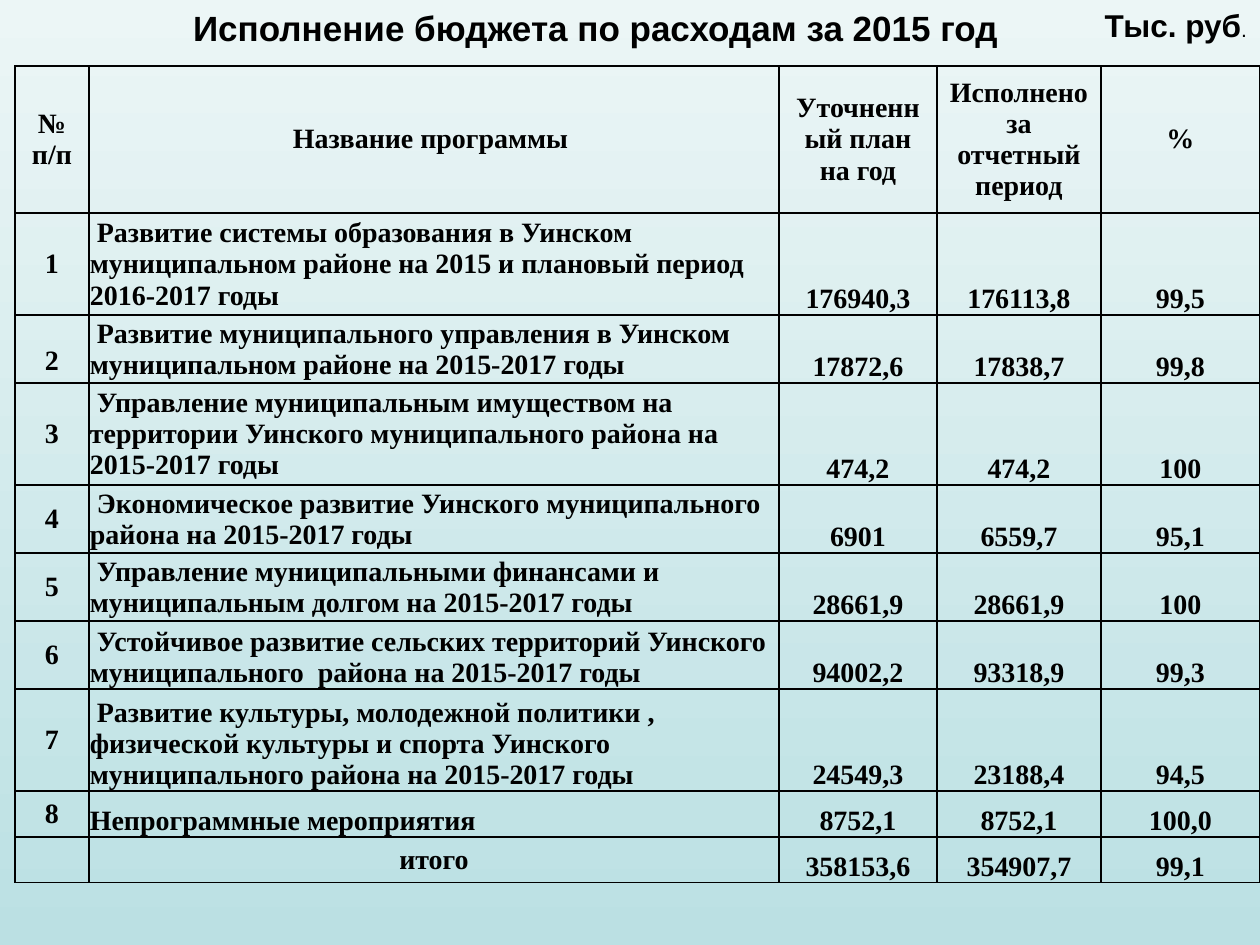
import dataclasses

import lxml.etree
import pptx
import pptx.dml.color
import pptx.enum.text
import pptx.oxml.ns
import pptx.util

# Content: number, programme, plan, actual, percent
TITLE = "Исполнение бюджета по расходам за 2015 год"
UNIT = "Тыс. руб"
HEADER = ("№ п/п", "Название программы ", "Уточненный план на год",
          "Исполнено за отчетный период", "%")
PROGRAMMES = [
    ("1", " Развитие системы образования в Уинском муниципальном районе на 2015 "
          "и плановый период 2016-2017 годы", "176940,3", "176113,8", "99,5"),
    ("2", " Развитие муниципального управления в Уинском муниципальном районе "
          "на 2015-2017 годы", "17872,6", "17838,7", "99,8"),
    ("3", " Управление муниципальным имуществом на территории Уинского "
          "муниципального района на 2015-2017 годы", "474,2", "474,2", "100"),
    ("4", " Экономическое развитие Уинского муниципального района "
          "на 2015-2017 годы", "6901", "6559,7", "95,1"),
    ("5", " Управление муниципальными финансами и муниципальным долгом "
          "на 2015-2017 годы", "28661,9", "28661,9", "100"),
    ("6", " Устойчивое развитие сельских территорий Уинского муниципального  "
          "района на 2015-2017 годы", "94002,2", "93318,9", "99,3"),
    ("7", " Развитие культуры, молодежной политики , физической культуры и спорта "
          "Уинского муниципального района на 2015-2017 годы",
     "24549,3", "23188,4", "94,5"),
    ("8", "Непрограммные мероприятия", "8752,1", "8752,1", "100,0"),
]
TOTAL = ("", "итого", "358153,6", "354907,7", "99,1")
ROWS = [HEADER, *PROGRAMMES, TOTAL]

# Layout in px, 126 px to the inch
COLUMN_WIDTHS = (74, 690, 158, 164, 159)
HEADER_HEIGHT, SHORT_HEIGHT = 147, 46
HEIGHT_BY_LINES = {2: 68, 3: 102}
NAME_LINES = (3, 2, 3, 2, 2, 2, 3)
ROW_HEIGHTS = [HEADER_HEIGHT, *(HEIGHT_BY_LINES[n] for n in NAME_LINES),
               SHORT_HEIGHT, SHORT_HEIGHT]
TABLE_LEFT, TABLE_TOP = 15, 66
NAME_COLUMN = 1
LOW_NUMBERS = {2}      # rows whose number sits at the bottom
LOW_NAMES = {6, 7, 8}  # rows whose name sits at the bottom


@dataclasses.dataclass(frozen=True)
class Theme:
    ink: str = "000000"
    top: str = "ECF6F6"
    bottom: str = "BBE0E3"
    heading_font: str = "Arial"
    table_font: str = "Times New Roman"
    title_size: int = 20
    unit_size: int = 18
    dot_size: int = 12
    table_size: int = 16
    border: int = 1


THEME = Theme()
ALIGN = pptx.enum.text.PP_ALIGN
ANCHOR = pptx.enum.text.MSO_ANCHOR


def px(count):
    return pptx.util.Emu(count * 914400 // 126)


def rgb(value):
    return pptx.dml.color.RGBColor.from_string(value)


def add_span(para, text, font, size, bold=True):
    span = para.add_run()
    span.text = text
    span.font.name = font
    span.font.size = pptx.util.Pt(size)
    span.font.bold = bold
    span.font.color.rgb = rgb(THEME.ink)


def add_element(parent, tag, **attributes):
    return lxml.etree.SubElement(parent, pptx.oxml.ns.qn(tag), attributes)


def add_heading(page, area, align, spans, right_inset=13):
    box = page.shapes.add_textbox(*map(px, area))
    frame = box.text_frame
    frame.word_wrap = True
    frame.margin_right = px(right_inset)
    para = frame.paragraphs[0]
    para.alignment = align
    space = add_element(para._p.get_or_add_pPr(), "a:spcBef")
    add_element(space, "a:spcPct", val="50000")
    for span in spans:
        add_span(para, *span)


def add_borders(cell):
    properties = cell._tc.get_or_add_tcPr()
    for side in ("a:lnL", "a:lnR", "a:lnT", "a:lnB"):
        line = add_element(properties, side, w=str(pptx.util.Pt(THEME.border)))
        add_element(add_element(line, "a:solidFill"), "a:srgbClr", val=THEME.ink)


def cell_anchor(row, column):
    if row == 0:
        return ANCHOR.MIDDLE
    if column == 0:
        low = row in LOW_NUMBERS
    elif column == NAME_COLUMN:
        low = row in LOW_NAMES
    else:
        low = True
    return ANCHOR.BOTTOM if low else ANCHOR.MIDDLE


def fill_cell(cell, row, column, text):
    add_borders(cell)
    cell.fill.background()
    cell.vertical_anchor = cell_anchor(row, column)
    if not text or (row > 0 and column > 0):
        cell.margin_left = cell.margin_right = cell.margin_top = px(1)
        cell.margin_bottom = 0
    para = cell.text_frame.paragraphs[0]
    is_name = column == NAME_COLUMN and 0 < row < len(ROWS) - 1
    para.alignment = ALIGN.LEFT if is_name else ALIGN.CENTER
    if text:
        add_span(para, text, THEME.table_font, THEME.table_size)


def add_budget_table(page):
    frame = page.shapes.add_table(
        len(ROWS), len(HEADER), px(TABLE_LEFT), px(TABLE_TOP),
        px(sum(COLUMN_WIDTHS)), px(sum(ROW_HEIGHTS)))
    table = frame.table
    table.first_row = table.horz_banding = False
    for column, width in zip(table.columns, COLUMN_WIDTHS):
        column.width = px(width)
    for row, height in zip(table.rows, ROW_HEIGHTS):
        row.height = px(height)
    for r, texts in enumerate(ROWS):
        for c, text in enumerate(texts):
            fill_cell(table.cell(r, c), r, c, text)


def main():
    deck = pptx.Presentation()
    deck.slide_width, deck.slide_height = px(1260), px(945)
    page = deck.slides.add_slide(deck.slide_layouts[6])

    # Background, light at the top
    fill = page.background.fill
    fill.gradient()
    fill.gradient_angle = 270
    for stop, colour, position in zip(
            fill.gradient_stops, (THEME.top, THEME.bottom), (0, 1)):
        stop.color.rgb = rgb(colour)
        stop.position = position

    # Table, then the title and the unit above it
    add_budget_table(page)
    add_heading(page, (174, 0, 863, 54), ALIGN.CENTER,
                [(TITLE, THEME.heading_font, THEME.title_size)], right_inset=32)
    add_heading(page, (1047, 0, 213, 50), ALIGN.RIGHT,
                [(UNIT, THEME.heading_font, THEME.unit_size),
                 (".", THEME.heading_font, THEME.dot_size, False)])
    deck.save("out.pptx")


if __name__ == "__main__":
    main()
